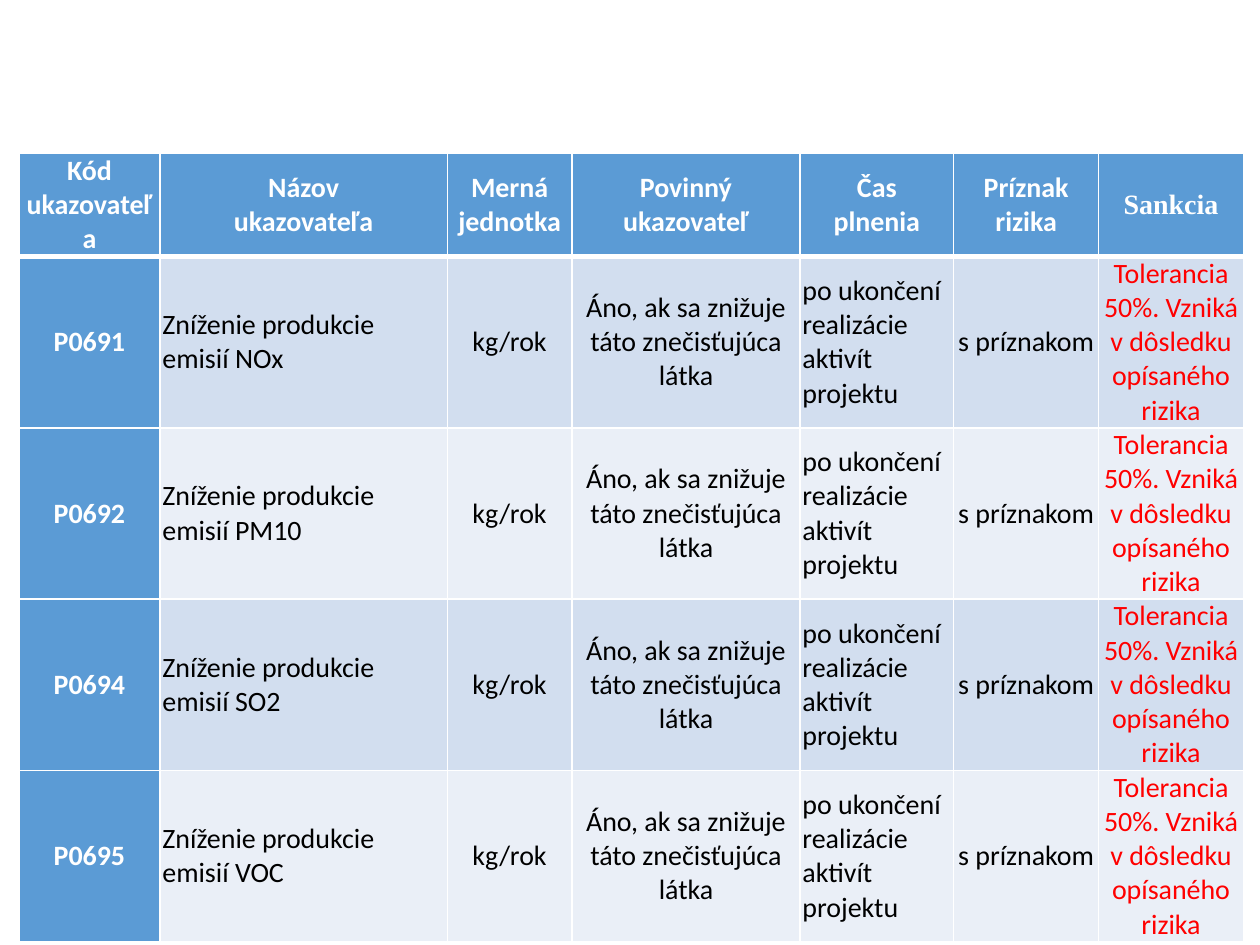
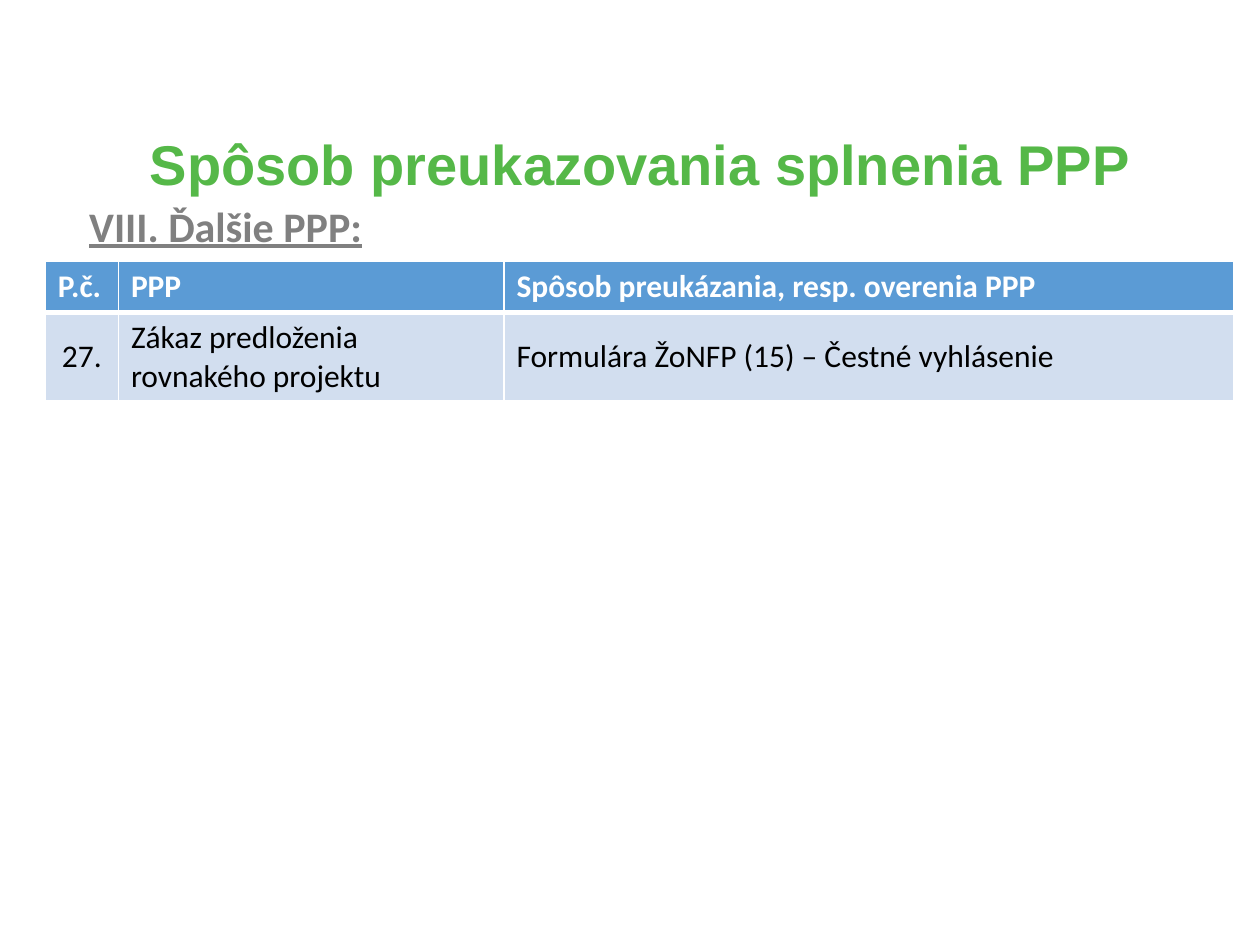
from lxml import etree
from pptx import Presentation
from pptx import util as u
from pptx.dml.color import RGBColor
from pptx.enum import text
from pptx.oxml.ns import qn

WHITE = RGBColor(0xFF, 0xFF, 0xFF)
BLACK = RGBColor(0x00, 0x00, 0x00)
RED = RGBColor(0xFF, 0x00, 0x00)
GREEN = RGBColor(0x55, 0xB8, 0x48)
GREY = RGBColor(0x80, 0x80, 0x80)
BLUE = RGBColor(0x5B, 0x9B, 0xD5)
BANDS = (RGBColor(0xD2, 0xDE, 0xEF), RGBColor(0xEA, 0xEF, 0xF7))

LEFT, CENTER = text.PP_ALIGN.LEFT, text.PP_ALIGN.CENTER
MIDDLE, TOP = text.MSO_ANCHOR.MIDDLE, text.MSO_ANCHOR.TOP


class Deck:
    """Holds the shared style and the slide being built."""

    def __init__(self):
        self.prs = Presentation()
        self.prs.slide_width = u.Inches(10)
        self.prs.slide_height = u.Inches(7.5)
        self.slide = None

    def new_slide(self):
        self.slide = self.prs.slides.add_slide(self.prs.slide_layouts[6])

    def style(self, frame, size, color, bold=False, font="Calibri", align=LEFT):
        for paragraph in frame.paragraphs:
            paragraph.alignment = align
            for run in paragraph.runs:
                run.font.name = font
                run.font.size = u.Pt(size)
                run.font.bold = bold
                run.font.color.rgb = color

    def label(self, words, box, size, color, anchor=TOP, **look):
        frame = self.slide.shapes.add_textbox(*map(u.Inches, box)).text_frame
        frame.word_wrap = True
        frame.vertical_anchor = anchor
        frame.text = words
        self.style(frame, size, color, bold=True, **look)
        return frame

    def borders(self, cell, top, bottom):
        """White cell borders; widths in points."""
        props = cell._tc.get_or_add_tcPr()
        for side, width in (("L", 1), ("R", 1), ("T", top), ("B", bottom)):
            line = etree.SubElement(props, qn(f"a:ln{side}"), w=str(u.Pt(width)))
            fill = etree.SubElement(line, qn("a:solidFill"))
            etree.SubElement(fill, qn("a:srgbClr"), val=str(WHITE))

    def table(self, rows, place, widths, heights, size, aligns,
              header_align=LEFT, header_anchor=MIDDLE, tight=False,
              key_column=False):
        left, top = place
        grid = self.slide.shapes.add_table(
            len(rows), len(widths), u.Inches(left), u.Inches(top),
            u.Inches(sum(widths)), u.Inches(sum(heights))).table
        for column, width in zip(grid.columns, widths):
            column.width = u.Inches(width)
        for r, (values, height) in enumerate(zip(rows, heights)):
            grid.rows[r].height = u.Inches(height)
            for c, value in enumerate(values):
                cell = grid.cell(r, c)
                header = r == 0
                strong = header or (key_column and c == 0)
                if tight:
                    cell.margin_left = cell.margin_right = u.Inches(0.02)
                    cell.margin_top = cell.margin_bottom = 0
                cell.vertical_anchor = header_anchor if header else MIDDLE
                self.borders(cell, top=3 if r == 1 else 1, bottom=3 if header else 1)
                cell.fill.solid()
                cell.fill.fore_color.rgb = BLUE if strong else BANDS[(r - 1) % 2]
                cell.text_frame.text = value
                self.style(cell.text_frame, size, WHITE if strong else BLACK,
                           bold=strong, align=header_align if header else aligns[c])
        return grid


def indicators_slide(deck):
    deck.new_slide()
    header = ["Kód ukazovateľa", "Názov\nukazovateľa", "Merná jednotka",
              "Povinný ukazovateľ", "Čas\nplnenia", "Príznak rizika", "Sankcia"]
    pollutants = {"P0691": "NOx", "P0692": "PM10", "P0694": "SO2", "P0695": "VOC"}
    indicators = [
        [code, f"Zníženie produkcie emisií {pollutant}", "kg/rok",
         "Áno, ak sa znižuje táto znečisťujúca látka",
         "po ukončení realizácie aktivít projektu", "s príznakom",
         "Tolerancia 50%. Vzniká v dôsledku opísaného rizika"]
        for code, pollutant in pollutants.items()]
    grid = deck.table(
        [header] + indicators, (0.15, 1.22),
        widths=[1.12, 2.28, 0.99, 1.81, 1.22, 1.15, 1.15],
        heights=[0.81] + [1.36] * len(indicators), size=16,
        aligns=[CENTER, LEFT, CENTER, CENTER, LEFT, CENTER, CENTER],
        header_align=CENTER, tight=True, key_column=True)

    # Sanction column: serif heading, red entries
    sanction = len(header) - 1
    deck.style(grid.cell(0, sanction).text_frame, 16, WHITE, bold=True,
               font="Times New Roman", align=CENTER)
    for r in range(1, len(indicators) + 1):
        deck.style(grid.cell(r, sanction).text_frame, 16, RED, align=CENTER)


def conditions_slide(deck):
    deck.new_slide()
    # Title and section heading
    title = deck.label("Spôsob preukazovania splnenia PPP", (0.61, 1.02, 8.95, 0.61),
                       32, GREEN, anchor=MIDDLE, font="Arial", align=CENTER)
    title.paragraphs[0].line_spacing = 0.9
    section = deck.label("VIII. Ďalšie PPP:", (0.61, 1.54, 8.53, 0.5), 24, GREY,
                         align=text.PP_ALIGN.JUSTIFY)
    section.paragraphs[0].runs[0].font.underline = True

    # Conditions and how they are proved
    deck.table(
        [["P.č.", "PPP", "Spôsob preukázania, resp. overenia PPP"],
         ["27.", "Zákaz predloženia rovnakého projektu",
          "Formulára ŽoNFP (15) – Čestné vyhlásenie"]],
        (0.36, 2.07), widths=[0.58, 3.06, 5.79], heights=[0.41, 0.7], size=18,
        aligns=[CENTER, LEFT, LEFT], header_anchor=TOP)


def main():
    deck = Deck()
    indicators_slide(deck)
    conditions_slide(deck)
    deck.prs.save("out.pptx")


if __name__ == "__main__":
    main()
